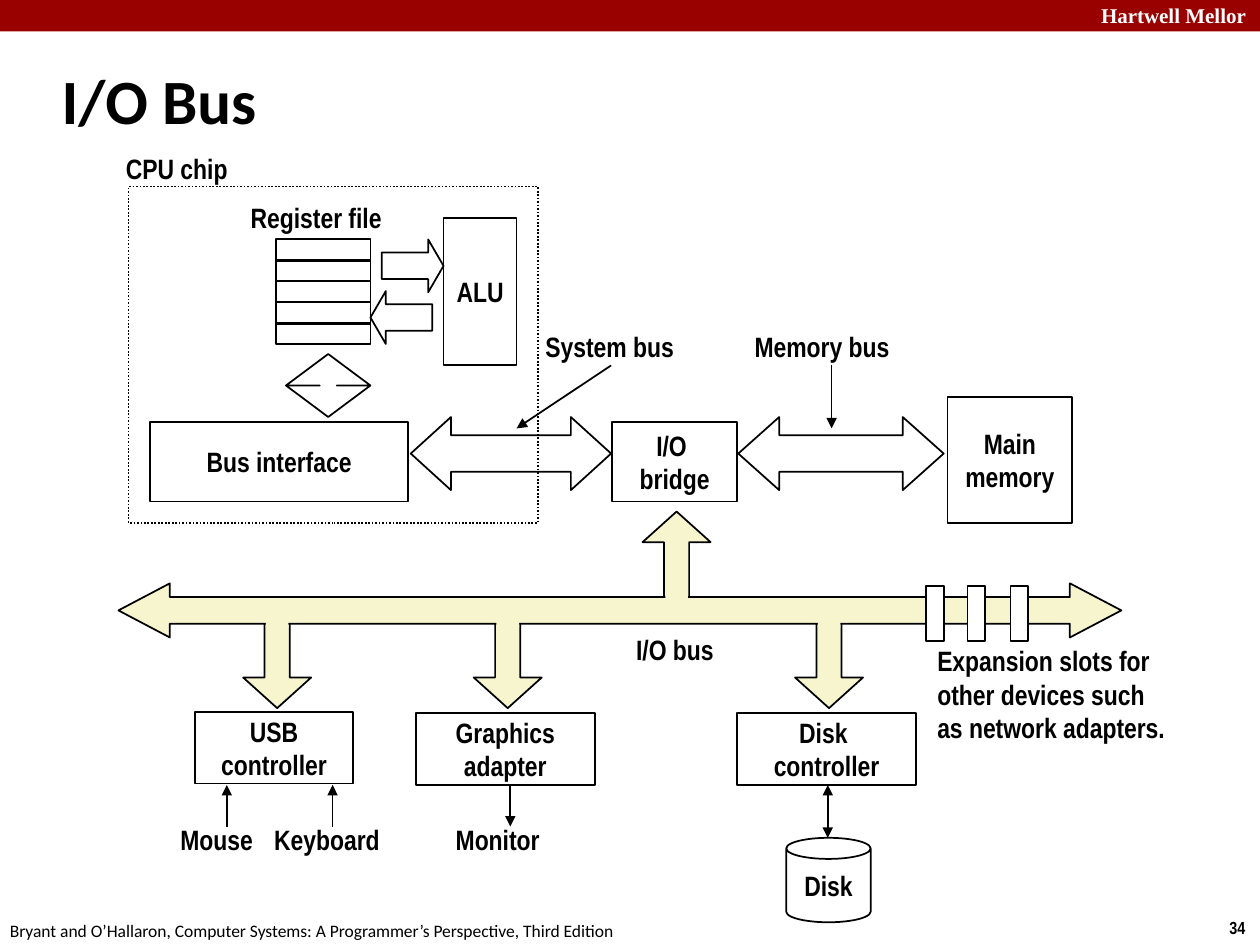
from dataclasses import dataclass

from lxml.etree import SubElement
from pptx import Presentation
from pptx.dml.color import RGBColor
from pptx.enum.dml import MSO_LINE
from pptx.enum.shapes import MSO_CONNECTOR, MSO_SHAPE
from pptx.enum.text import MSO_ANCHOR, MSO_AUTO_SIZE, PP_ALIGN
from pptx.oxml.ns import qn
from pptx.util import Emu, Pt

PX_PER_INCH = 100


@dataclass(frozen=True)
class Theme:
    banner: str = "990000"
    ink: str = "000000"
    paper: str = "FFFFFF"
    io_bus: str = "F7F5CD"
    diagram_font: str = "Arial Narrow"
    text_font: str = "Calibri"
    banner_font: str = "Times New Roman"
    title_size: int = 36
    diagram_size: int = 16
    banner_size: int = 12
    footer_size: int = 10
    outline: int = 1


THEME = Theme()


def px(length):
    return Emu(round(length * 914400 / PX_PER_INCH))


def write(frame, text, align, anchor=MSO_ANCHOR.MIDDLE, size=THEME.diagram_size,
          font=THEME.diagram_font, color=THEME.ink, bold=True):
    frame.text = text
    frame.word_wrap = False
    frame.vertical_anchor = anchor
    for paragraph in frame.paragraphs:
        paragraph.alignment = align
        for run in paragraph.runs:
            run.font.name = font
            run.font.size = Pt(size)
            run.font.bold = bold
            run.font.color.rgb = RGBColor.from_string(color)


class Region:
    def __init__(self, slide, left, top):
        self.shapes = slide.shapes
        self.left, self.top = left, top

    def place(self, x, y):
        return px(self.left + x), px(self.top + y)

    def shape(self, kind, x, y, width, height, text="", fill=None,
              outlined=True, adjust=()):
        shape = self.shapes.add_shape(kind, *self.place(x, y), px(width), px(height))
        shape.shadow.inherit = False
        for index, value in enumerate(adjust):
            shape.adjustments[index] = value
        if fill:
            shape.fill.solid()
            shape.fill.fore_color.rgb = RGBColor.from_string(fill)
        else:
            shape.fill.background()
        if outlined:
            shape.line.color.rgb = RGBColor.from_string(THEME.ink)
            shape.line.width = Pt(THEME.outline)
        else:
            shape.line.fill.background()
        if text:
            write(shape.text_frame, text, PP_ALIGN.CENTER)
        return shape

    def box(self, x, y, width, height, text="", **style):
        return self.shape(MSO_SHAPE.RECTANGLE, x, y, width, height, text, **style)

    def label(self, text, x, y, width, height=37, align=PP_ALIGN.LEFT, **style):
        label = self.shapes.add_textbox(*self.place(x, y), px(width), px(height))
        write(label.text_frame, text, align, **style)
        label.text_frame.auto_size = MSO_AUTO_SIZE.SHAPE_TO_FIT_TEXT

    def arrow(self, start, end, ends=("tailEnd",)):
        arrow = self.shapes.add_connector(
            MSO_CONNECTOR.STRAIGHT, *self.place(*start), *self.place(*end))
        arrow.line.color.rgb = RGBColor.from_string(THEME.ink)
        arrow.line.width = Pt(THEME.outline)
        line = arrow.line._get_or_add_ln()
        for end_tag in ends:
            SubElement(line, qn(f"a:{end_tag}"), type="triangle")
        SubElement(arrow._element.spPr, qn("a:effectLst"))


def add_page_frame(slide, left, top):
    page = Region(slide, left, top)
    page.box(0, 0, 1000, 25, fill=THEME.banner, outlined=False)
    page.label("Hartwell Mellor", 864, -3, 143, 30, anchor=MSO_ANCHOR.TOP,
               size=THEME.banner_size, font=THEME.banner_font, color=THEME.paper)
    page.label("34", 966, 723, 34, 27, anchor=MSO_ANCHOR.TOP, size=THEME.footer_size)
    page.label("Bryant and O’Hallaron, Computer Systems: A Programmer’s Perspective, Third Edition",
               -2, 725, 508, 27, anchor=MSO_ANCHOR.TOP, size=THEME.footer_size,
               font=THEME.text_font, bold=False)
    page.label("I/O Bus", 39, 44, 830, 69, size=THEME.title_size, font=THEME.text_font)


def add_cpu_chip(slide, left, top):
    cpu = Region(slide, left, top)
    chip = cpu.box(0, 0, 325, 267)
    chip.line.dash_style = MSO_LINE.ROUND_DOT
    cpu.label("CPU chip", -12, -33, 119)
    cpu.label("Register file", 86, 6, 126, align=PP_ALIGN.CENTER)
    for register in range(5):
        cpu.box(117, 42 + register * 50 // 3, 75, 17)
    cpu.shape(MSO_SHAPE.RIGHT_ARROW, 201, 42, 49, 42, adjust=(0.5, 0.29))
    cpu.shape(MSO_SHAPE.LEFT_ARROW, 192, 83, 49, 42, adjust=(0.5, 0.29))
    cpu.box(250, 25, 58, 117, "ALU")
    cpu.shape(MSO_SHAPE.UP_DOWN_ARROW, 125, 133, 67, 50, adjust=(0.5, 0.2))
    cpu.box(17, 187, 205, 63, "Bus interface")


def add_system_buses(slide, left, top):
    buses = Region(slide, left, top)
    for x, width, head in ((0, 159, 0.55), (260, 163, 0.56)):
        buses.shape(MSO_SHAPE.LEFT_RIGHT_ARROW, x, 75, width, 58, adjust=(0.5, head))
    buses.box(160, 79, 99, 63, "I/O \nbridge")
    buses.box(426, 59, 99, 100, "Main\nmemory")
    buses.label("System bus", 97, 0, 123)
    buses.arrow((159, 34), (84, 84))
    buses.label("Memory bus", 263, 0, 129)
    buses.arrow((334, 34), (334, 84))


def add_io_bus(slide, left, top):
    bus = Region(slide, left, top)
    branches = [(MSO_SHAPE.UP_ARROW, 416, 0, 67)]
    branches += [(MSO_SHAPE.DOWN_ARROW, x, 81, 75) for x in (99, 282, 537)]
    for kind, x, y, _ in branches:
        bus.shape(kind, x, y, 54, 75, fill=THEME.io_bus, adjust=(0.37, 0.45))
    bus.shape(MSO_SHAPE.LEFT_RIGHT_ARROW, 0, 57, 796, 43, fill=THEME.io_bus,
              adjust=(0.49, 0.95))
    for _, x, _, joint_y in branches:
        bus.box(x + 18, joint_y, 18, 17, fill=THEME.io_bus, outlined=False)
    for slot in range(3):
        bus.box(641 + slot * 67 // 2, 59, 14, 44, fill=THEME.paper)
    bus.label("I/O bus", 401, 91, 96)
    bus.label("Expansion slots for\nother devices such\nas network adapters.",
              640, 100, 242, 90, anchor=MSO_ANCHOR.TOP)


def add_devices(slide, left, top):
    devices = Region(slide, left, top)
    for text, x, y, width in (("USB\ncontroller", 22, 0, 125),
                              ("Graphics\nadapter", 197, 1, 142),
                              ("Disk \ncontroller", 452, 1, 142)):
        devices.box(x, y, width, 57, text)
    for text, x, width, arrow_x, end in (("Mouse", 0, 78, 47, "headEnd"),
                                         ("Keyboard", 74, 105, 131, "headEnd"),
                                         ("Monitor", 218, 88, 272, "tailEnd")):
        devices.label(text, x, 83, width, align=PP_ALIGN.CENTER)
        devices.arrow((arrow_x, 58), (arrow_x, 91), (end,))
    devices.arrow((524, 58), (524, 100), ("headEnd", "tailEnd"))
    devices.shape(MSO_SHAPE.CAN, 491, 100, 67, 67, "Disk", adjust=(0.25,))


def main():
    presentation = Presentation()
    presentation.slide_width = px(1000)
    presentation.slide_height = px(750)
    slide = presentation.slides.add_slide(presentation.slide_layouts[6])
    add_page_frame(slide, 0, 0)
    add_system_buses(slide, 326, 256)
    add_cpu_chip(slide, 102, 148)
    add_io_bus(slide, 94, 406)
    add_devices(slide, 133, 565)
    presentation.save("out.pptx")


if __name__ == "__main__":
    main()
